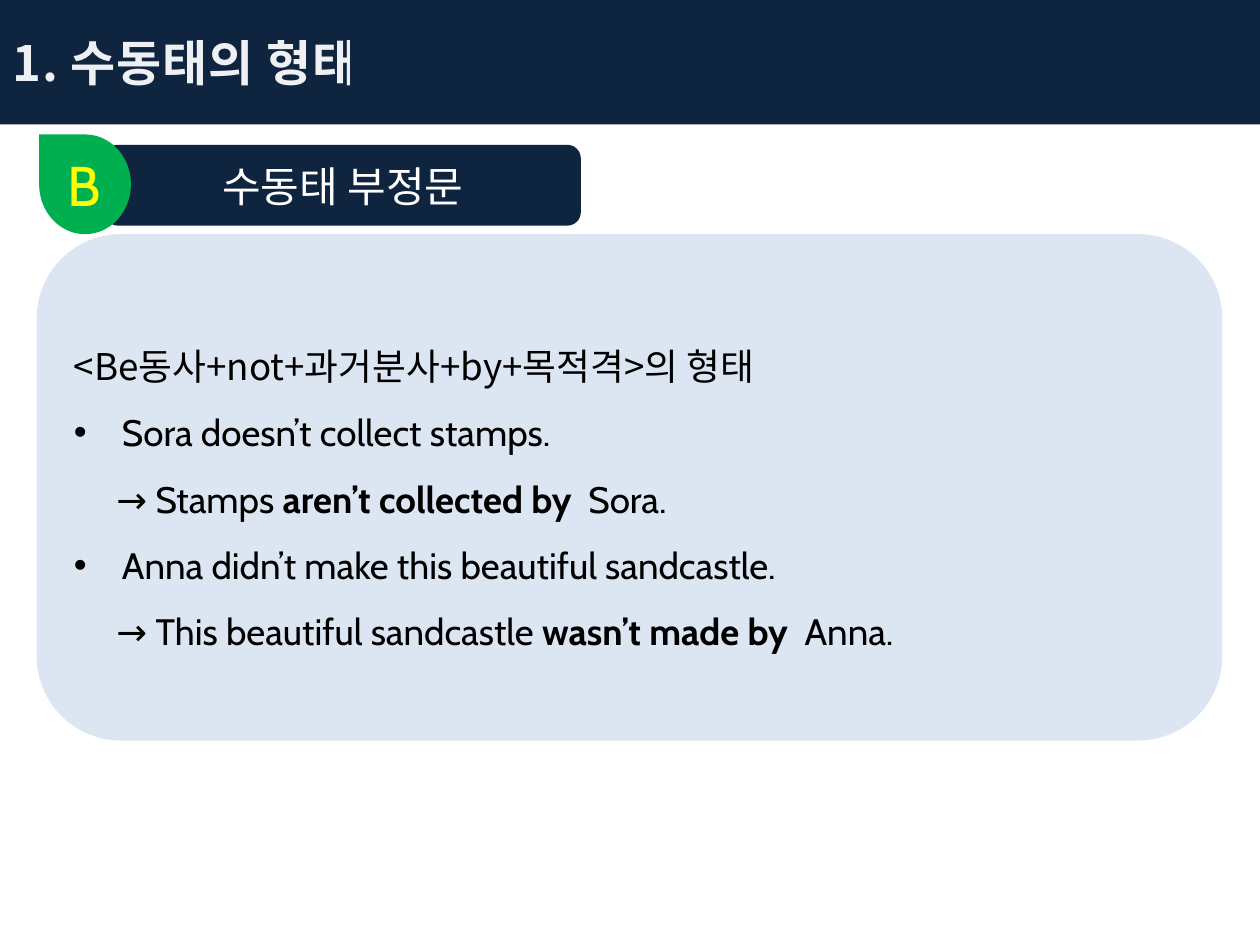
from dataclasses import dataclass

from lxml import etree
from pptx import Presentation
from pptx.dml.color import RGBColor
from pptx.enum.shapes import MSO_SHAPE
from pptx.enum.text import MSO_ANCHOR, PP_ALIGN
from pptx.oxml.ns import qn
from pptx.util import Cm, Pt

RECTANGLE = MSO_SHAPE.RECTANGLE
ROUNDED = MSO_SHAPE.FLOWCHART_ALTERNATE_PROCESS
TEAR = MSO_SHAPE.TEAR
MIDDLE = MSO_ANCHOR.MIDDLE
LEFT, CENTER, JUSTIFY = PP_ALIGN.LEFT, PP_ALIGN.CENTER, PP_ALIGN.JUSTIFY

KOREAN_FONT = "Noto Sans CJK KR"
LATIN_FONT = "Cabin"
COLORS = {
    "navy": "0F243E",
    "panel": "DCE6F2",
    "green": "00B050",
    "yellow": "FFFF00",
    "title": "FCFCFD",
    "white": "FFFFFF",
    "black": "000000",
}
BULLET_INDENT = Cm(0.97)
ANSWER_INDENT = Cm(0.86)


@dataclass
class Box:
    left: float
    top: float
    width: float
    height: float

    def lengths(self) -> list:
        return [Cm(v) for v in (self.left, self.top, self.width, self.height)]


@dataclass
class TextStyle:
    size: int
    color: str
    font: str = KOREAN_FONT
    bold: bool = False


@dataclass
class Example:
    sentence: str
    subject: str
    verb: str
    agent: str


EXAMPLES = [
    Example("Sora doesn’t collect stamps.", "Stamps ", "aren’t collected by  ", "Sora."),
    Example("Anna didn’t make this beautiful sandcastle.",
            "This beautiful sandcastle ", "wasn’t made by  ", "Anna."),
]


def add_block(slide, kind, box: Box, color: str, rotation: int = 0):
    shape = slide.shapes.add_shape(kind, *box.lengths())
    shape.shadow.inherit = False
    shape.fill.solid()
    shape.fill.fore_color.rgb = RGBColor.from_string(COLORS[color])
    shape.line.fill.background()
    shape.rotation = rotation
    shape.text_frame.word_wrap = True
    shape.text_frame.vertical_anchor = MIDDLE
    return shape


def add_run(paragraph, text: str, style: TextStyle):
    run = paragraph.add_run()
    run.text = text
    formats = {"size": Pt(style.size), "name": style.font, "bold": style.bold}
    run.font.color.rgb = RGBColor.from_string(COLORS[style.color])
    for name, value in formats.items():
        setattr(run.font, name, value)
    properties = run.font._element
    etree.SubElement(properties, qn("a:ea"), typeface=KOREAN_FONT)
    return run


def add_line(text_frame, alignment, first: bool = True):
    paragraph = text_frame.paragraphs[0] if first else text_frame.add_paragraph()
    paragraph.alignment = alignment
    return paragraph


def add_body_line(text_frame, first: bool = False, indent: int = 0, bullet: bool = False):
    paragraph = add_line(text_frame, JUSTIFY, first)
    paragraph.line_spacing = 1.5
    properties = paragraph._p.get_or_add_pPr()
    properties.set("marL", str(indent))
    if bullet:
        properties.set("indent", str(-indent))
        etree.SubElement(properties, qn("a:buFont"), typeface="Arial")
        etree.SubElement(properties, qn("a:buChar"), char="•")
    return paragraph


def main() -> None:
    presentation = Presentation()
    presentation.slide_width, presentation.slide_height = Cm(25.4), Cm(19.05)
    slide = presentation.slides.add_slide(presentation.slide_layouts[6])

    # Title bar, with slightly spaced and translucent lettering
    title = add_block(slide, RECTANGLE, Box(0, 0, 25.4, 2.51), "navy")
    run = add_run(add_line(title.text_frame, LEFT), "1. 수동태의 형태",
                  TextStyle(28, "title", bold=True))
    properties = run.font._element
    properties.set("spc", "50")
    color = properties.find(".//" + qn("a:srgbClr"))
    etree.SubElement(color, qn("a:alpha"), val="95000")

    # Panel with the rule and its examples
    panel = add_block(slide, ROUNDED, Box(0.74, 4.72, 23.9, 10.21), "panel")
    frame = panel.text_frame
    plain = TextStyle(21, "black", LATIN_FONT)
    strong = TextStyle(21, "black", LATIN_FONT, bold=True)
    add_run(add_body_line(frame, first=True), "<Be동사+not+과거분사+by+목적격>의 형태",
            TextStyle(21, "black"))
    for example in EXAMPLES:
        add_run(add_body_line(frame, indent=BULLET_INDENT, bullet=True),
                example.sentence, plain)
        answer = add_body_line(frame, indent=ANSWER_INDENT)
        add_run(answer, "→ " + example.subject, plain)
        add_run(answer, example.verb, strong)
        add_run(answer, example.agent, plain)

    # Section label
    label = add_block(slide, ROUNDED, Box(2.11, 2.92, 9.6, 1.63), "navy")
    add_run(add_line(label.text_frame, CENTER), "수동태 부정문", TextStyle(24, "white"))

    # Section letter on its teardrop
    add_block(slide, TEAR, Box(0.71, 2.79, 2.01, 1.85), "green", rotation=270)
    letter = slide.shapes.add_textbox(*Box(1.12, 2.9, 1.19, 1.63).lengths())
    letter.text_frame.word_wrap = False
    add_run(add_line(letter.text_frame, LEFT), "B", TextStyle(32, "yellow", LATIN_FONT))

    presentation.save("out.pptx")


if __name__ == "__main__":
    main()
